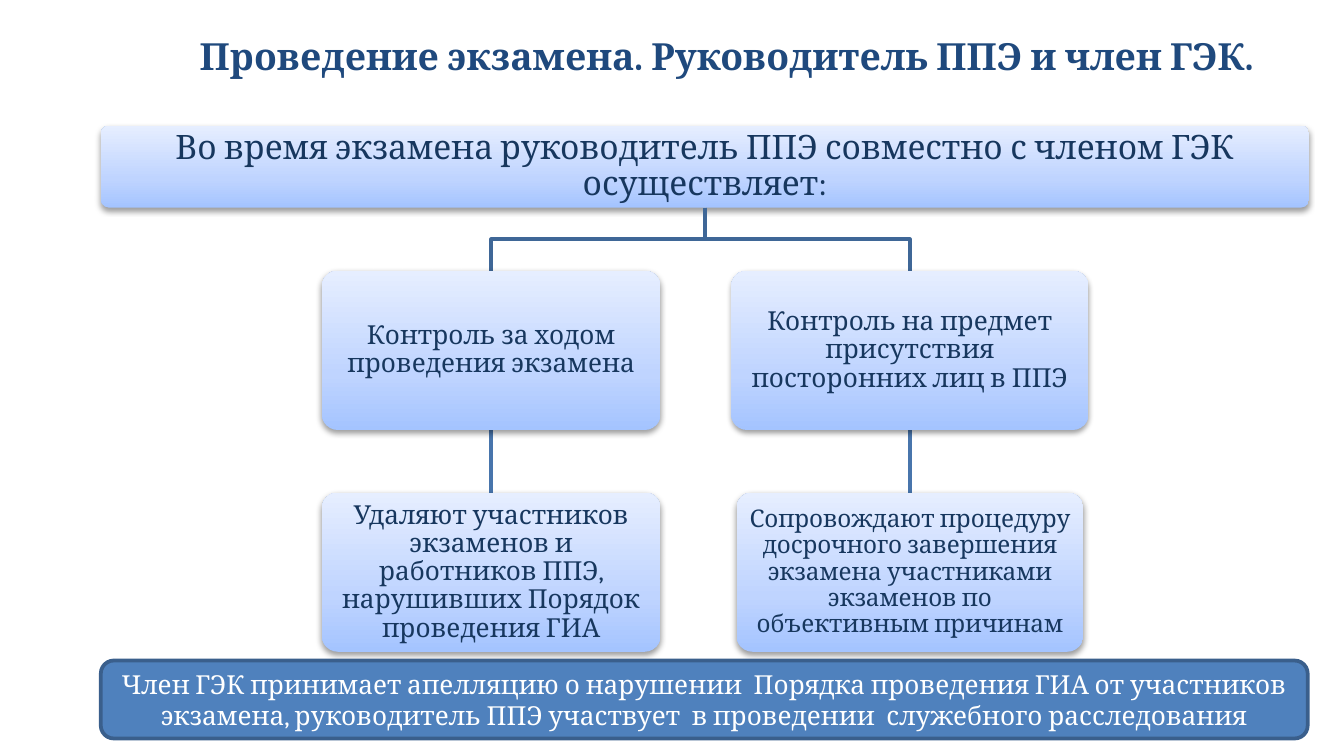
from copy import deepcopy
from lxml.etree import SubElement
from pptx import Presentation
from pptx.dml.color import RGBColor
from pptx.enum.shapes import MSO_CONNECTOR, MSO_SHAPE
from pptx.enum.text import MSO_ANCHOR, PP_ALIGN
from pptx.oxml.ns import qn
from pptx.util import Pt

PX = 4572
FONT = "Cambria"
TITLE = RGBColor(0x1F, 0x49, 0x7D)
INK = RGBColor(0x17, 0x37, 0x5E)
WHITE = RGBColor(0xFF, 0xFF, 0xFF)
BLUE = RGBColor(0x4F, 0x81, 0xBD)
BLUE_EDGE = RGBColor(0x3A, 0x5F, 0x8C)
BRANCH = RGBColor(0x3F, 0x67, 0x97)
STEM = RGBColor(0x48, 0x75, 0xAC)
GRADIENT = [RGBColor(0xA4, 0xC4, 0xFF), RGBColor(0xBF, 0xD4, 0xFF), RGBColor(0xE6, 0xEE, 0xFF)]


def write(sp, text, size, color, bold=False):
    tf = sp.text_frame
    tf.word_wrap = True
    tf.vertical_anchor = MSO_ANCHOR.MIDDLE
    p = tf.paragraphs[0]
    p.text = text
    p.alignment = PP_ALIGN.CENTER
    p.font.name = FONT
    p.font.size = Pt(size)
    p.font.bold = bold
    p.font.color.rgb = color
    return p


def add_box(s, x, y, w, h, text, size, inset):
    sp = s.shapes.add_shape(MSO_SHAPE.ROUNDED_RECTANGLE, x * PX, y * PX, w * PX, h * PX)
    sp.adjustments[0] = 0.1
    sp.line.fill.background()
    sp.fill.gradient()
    sp.fill.gradient_angle = 90
    stops = sp._element.spPr.find(qn("a:gradFill")).find(qn("a:gsLst"))
    middle = deepcopy(stops[0])
    middle.set("pos", "35000")
    stops.insert(1, middle)
    for stop, color in zip(sp.fill.gradient_stops, GRADIENT):
        stop.color.rgb = color
    sp.shadow.inherit = False
    effects = sp._element.spPr.find(qn("a:effectLst"))
    shadow = SubElement(effects, qn("a:outerShdw"), blurRad="40000", dist="20000",
                        dir="5400000", rotWithShape="0")
    black = SubElement(shadow, qn("a:srgbClr"), val="000000")
    SubElement(black, qn("a:alpha"), val="38000")
    tf = sp.text_frame
    tf.margin_left = tf.margin_right = tf.margin_top = tf.margin_bottom = inset * PX
    write(sp, text, size, INK).line_spacing = 0.9


prs = Presentation()
prs.slide_width = 2000 * PX
prs.slide_height = 1125 * PX
s = prs.slides.add_slide(prs.slide_layouts[5])

title = s.shapes.title
title.left, title.top, title.width, title.height = 181 * PX, 28 * PX, 1800 * PX, 110 * PX
write(title, "Проведение экзамена. Руководитель ППЭ и член ГЭК.", 20, TITLE, True)

add_box(s, 150, 187, 1798, 122,
        "Во время экзамена руководитель ППЭ совместно с членом ГЭК осуществляет:", 18, 14)

ROOT_X, ROOT_BOTTOM, BEND = 1049, 309, 356
ROWS, BOX_H = [403, 733], 237
columns = [
    (731, [(504, 14, 12, "Контроль за ходом проведения экзамена"),
           (504, 14, 12, "Удаляют участников экзаменов и работников ППЭ, нарушивших Порядок проведения ГИА")]),
    (1354, [(532, 14, 12, "Контроль на предмет присутствия посторонних лиц в ППЭ"),
            (516, 13, 10, "Сопровождают процедуру досрочного завершения экзамена участниками экзаменов по объективным причинам")]),
]

for x, boxes in columns:
    fb = s.shapes.build_freeform(ROOT_X * PX, ROOT_BOTTOM * PX)
    fb.add_line_segments([(ROOT_X * PX, BEND * PX), (x * PX, BEND * PX), (x * PX, ROWS[0] * PX)], close=False)
    branch = fb.convert_to_shape()
    branch.fill.background()
    branch.shadow.inherit = False
    branch.line.color.rgb = BRANCH
    branch.line.width = Pt(2)

    stem = s.shapes.add_connector(MSO_CONNECTOR.STRAIGHT, x * PX, (ROWS[0] + BOX_H) * PX, x * PX, ROWS[1] * PX)
    stem.line.color.rgb = STEM
    stem.line.width = Pt(2)
    SubElement(stem._element.spPr, qn("a:effectLst"))

    for y, (w, size, inset, text) in zip(ROWS, boxes):
        add_box(s, x - w // 2, y, w, BOX_H, text, size, inset)

footer = s.shapes.add_shape(MSO_SHAPE.ROUNDED_RECTANGLE, 150 * PX, 983 * PX, 1796 * PX, 116 * PX)
footer.shadow.inherit = False
footer.fill.solid()
footer.fill.fore_color.rgb = BLUE
footer.line.color.rgb = BLUE_EDGE
footer.line.width = Pt(2)
write(footer, "Член ГЭК принимает апелляцию о нарушении  Порядка проведения ГИА от участников экзамена, "
      "руководитель ППЭ участвует  в проведении  служебного расследования", 14, WHITE)

prs.save("out.pptx")
